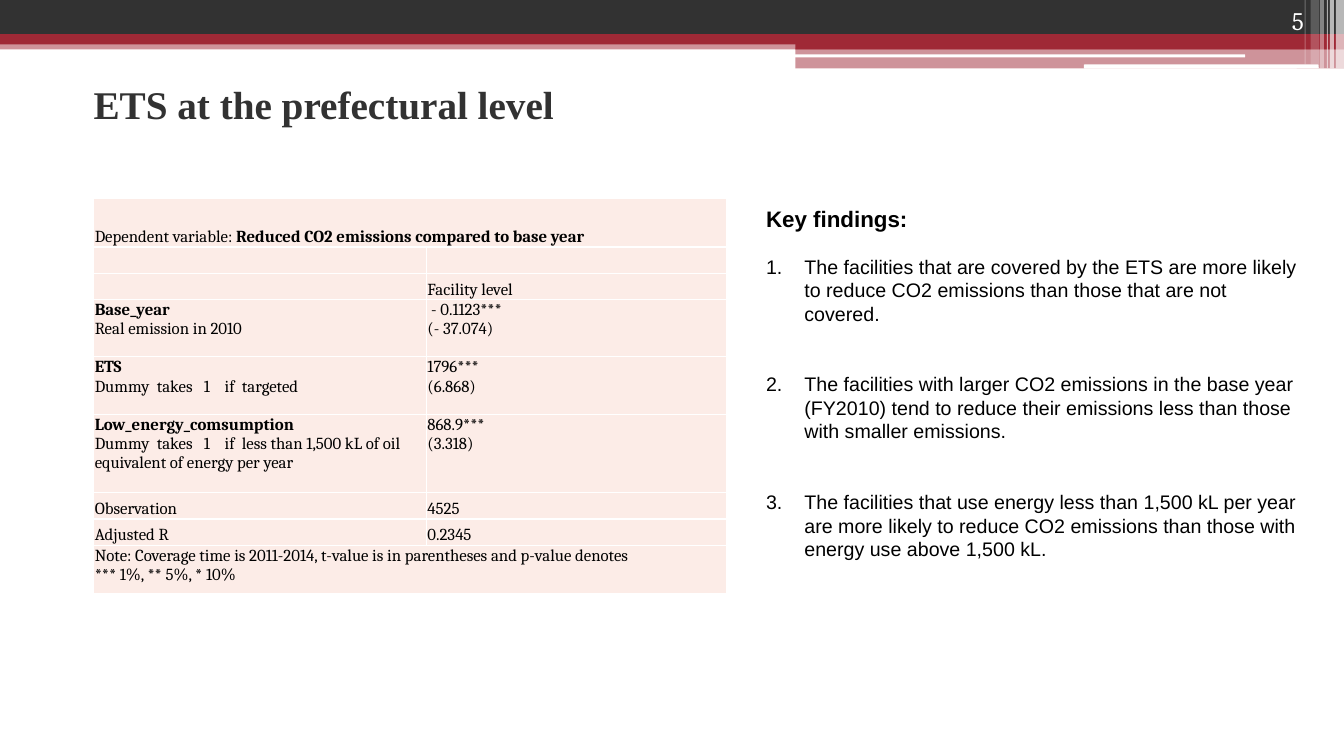
from lxml import etree
from pptx import Presentation
from pptx import util as u
from pptx.dml.color import RGBColor
from pptx.enum import shapes, text
from pptx.oxml.ns import qn

COLORS = {"dark": "323232", "red": "9F2936", "white": "FFFFFF",
          "black": "000000", "cell": "FCECE7"}
TITLE = "ETS at the prefectural level"
PAGE = "5"

# left, top, width, height, colour, opacity in percent, rounded
BANDS = [
    (0, 0.4, 13.33, 0.09, "red", 50, False),
    (0, 0, 13.33, 0.34, "dark", 100, False),
    (0, 0.34, 13.33, 0.1, "red", 100, False),
    (7.89, 0.39, 5.44, 0.1, "red", 100, False),
    (7.89, 0.48, 5.44, 0.2, "red", 50, False),
    (7.88, 0.54, 4.47, 0.03, "white", 100, True),
    (10.75, 0.64, 2.33, 0.04, "white", 100, True),
    (13.25, 0, 0.08, 0.68, "white", 65, False),
    (13.19, 0, 0.04, 0.68, "white", 65, False),
    (13.16, 0, 0.01, 0.68, "white", 60, False),
    (13.09, 0, 0.04, 0.68, "white", 40, False),
    (13, 0, 0.08, 0.64, "white", 20, False),
    (12.94, 0, 0.01, 0.64, "white", 30, False),
]

# A cell is a list of paragraphs, a paragraph a list of (text, bold) runs.
COLUMNS = [3.3, 2.98]
ROWS = [  # height, anchor, cells; a single cell spans the row
    (0.48, "bottom", [[[("Dependent variable: ", False),
                        ("Reduced CO2 emissions compared to base year", True)]]]),
    (0.26, "bottom", [[[]], [[]]]),
    (0.26, "bottom", [[[]], [[("Facility level", False)]]]),
    (0.57, "top", [[[("Base_year", True)], [("Real emission in 2010", False)]],
                   [[(" - 0.1123***", False)], [("(- 37.074)", False)]]]),
    (0.57, "top", [[[("ETS", True)], [("Dummy  takes   1    if  targeted", False)]],
                   [[("1796***", False)], [("(6.868)", False)]]]),
    (0.78, "top", [[[("Low_energy_comsumption", True)],
                    [("Dummy  takes   1    if  less than 1,500 kL of oil "
                      "equivalent of energy per year", False)]],
                   [[("868.9***", False)], [("(3.318)", False)]]]),
    (0.26, "bottom", [[[("Observation", False)]], [[("4525", False)]]]),
    (0.26, "bottom", [[[("Adjusted R", False)]], [[("0.2345", False)]]]),
    (0.48, "top", [[[("Note: Coverage time is 2011-2014, t-value is in parentheses "
                      "and p-value denotes", False)],
                    [("*** 1%, ** 5%, * 10%", False)]]]),
]

FINDINGS_HEAD = "Key findings:"
FINDINGS = [
    "The facilities that are covered by the ETS are more likely to reduce CO2 "
    "emissions than those that are not covered.",
    "The facilities with larger CO2 emissions in the base year (FY2010) tend to "
    "reduce their emissions less than those with smaller emissions.",
    "The facilities that use energy less than 1,500 kL per year are more likely to "
    "reduce CO2 emissions than those with energy use above 1,500 kL.",
]
ANCHORS = {"top": text.MSO_ANCHOR.TOP, "middle": text.MSO_ANCHOR.MIDDLE,
           "bottom": text.MSO_ANCHOR.BOTTOM}


def rgb(name):
    return RGBColor.from_string(COLORS[name])


def style(font, size, face, color, bold=False):
    font.size, font.name, font.bold = u.Pt(size), face, bold
    font.color.rgb = rgb(color)


def add_run(p, words, *look):
    r = p.add_run()
    r.text = words
    style(r.font, *look)


def add_band(s, left, top, width, height, color, opacity, rounded):
    kind = shapes.MSO_SHAPE.ROUNDED_RECTANGLE if rounded else shapes.MSO_SHAPE.RECTANGLE
    sp = s.shapes.add_shape(kind, *map(u.Inches, (left, top, width, height)))
    sp.shadow.inherit = False
    sp.line.fill.background()
    sp.fill.solid()
    sp.fill.fore_color.rgb = rgb(color)
    if opacity < 100:
        clr = sp.fill._xPr.find(".//" + qn("a:srgbClr"))
        etree.SubElement(clr, qn("a:alpha"), val=str(opacity * 1000))


def add_box(s, left, top, width, height, anchor):
    tf = s.shapes.add_textbox(*map(u.Inches, (left, top, width, height))).text_frame
    tf.word_wrap = True
    tf.vertical_anchor = ANCHORS[anchor]
    return tf


def add_borders(cell):
    pr = cell._tc.get_or_add_tcPr()
    for side in ("lnL", "lnR", "lnT", "lnB"):
        ln = etree.SubElement(pr, qn("a:" + side), w=str(u.Pt(1)))
        fill = etree.SubElement(ln, qn("a:solidFill"))
        etree.SubElement(fill, qn("a:srgbClr"), val=COLORS["white"])


def fill_cell(cell, paragraphs, anchor):
    cell.margin_left = cell.margin_right = cell.margin_top = u.Inches(0.01)
    cell.margin_bottom = 0
    cell.vertical_anchor = ANCHORS[anchor]
    tf = cell.text_frame
    for i, runs in enumerate(paragraphs):
        p = tf.add_paragraph() if i else tf.paragraphs[0]
        style(p.font, 12, "Cambria", "black")
        for words, bold in runs:
            add_run(p, words, 12, "Cambria", "black", bold)
        if not runs:
            etree.SubElement(p._p, qn("a:endParaRPr"), sz="1200")


def add_results(s):
    height = sum(row[0] for row in ROWS)
    frame = s.shapes.add_table(len(ROWS), len(COLUMNS), u.Inches(0.93), u.Inches(1.97),
                               u.Inches(sum(COLUMNS)), u.Inches(height))
    table = frame.table
    table.first_row = table.horz_banding = False
    for column, width in zip(table.columns, COLUMNS):
        column.width = u.Inches(width)
    for i, (height, anchor, cells) in enumerate(ROWS):
        table.rows[i].height = u.Inches(height)
        for cell in table.rows[i].cells:
            add_borders(cell)
            cell.fill.solid()
            cell.fill.fore_color.rgb = rgb("cell")
        if len(cells) == 1:
            table.cell(i, 0).merge(table.cell(i, 1))
        for j, paragraphs in enumerate(cells):
            fill_cell(table.cell(i, j), paragraphs, anchor)


def add_findings(s):
    tf = add_box(s, 7.5, 1.97, 5.53, 5.08, "top")
    p = tf.paragraphs[0]
    p.line_spacing = u.Pt(20)
    add_run(p, FINDINGS_HEAD, 16, "Arial", "black", True)
    for i, finding in enumerate(FINDINGS):
        p = tf.add_paragraph()
        p.line_spacing = u.Pt(16.8)
        p.space_before = u.Pt(33.6 if i else 16.5)
        pr = p._p.get_or_add_pPr()
        pr.set("marL", str(u.Inches(0.38)))
        pr.set("indent", str(u.Inches(-0.38)))
        etree.SubElement(pr, qn("a:buFont"), typeface="+mj-lt")
        etree.SubElement(pr, qn("a:buAutoNum"), type="arabicPeriod")
        add_run(p, finding, 14, "Arial", "black")


def main():
    prs = Presentation()
    prs.slide_width, prs.slide_height = u.Inches(13.33), u.Inches(7.5)
    s = prs.slides.add_slide(prs.slide_layouts[6])
    for band in BANDS:
        add_band(s, *band)
    p = add_box(s, 11.92, 0, 1.11, 0.4, "bottom").paragraphs[0]
    p.alignment = text.PP_ALIGN.RIGHT
    add_run(p, PAGE, 18, "Cambria", "white")
    add_results(s)
    add_findings(s)
    p = add_box(s, 0.83, 0.83, 12, 0.4, "middle").paragraphs[0]
    add_run(p, TITLE, 28, "Times New Roman", "dark", True)
    prs.save("out.pptx")


if __name__ == "__main__":
    main()
